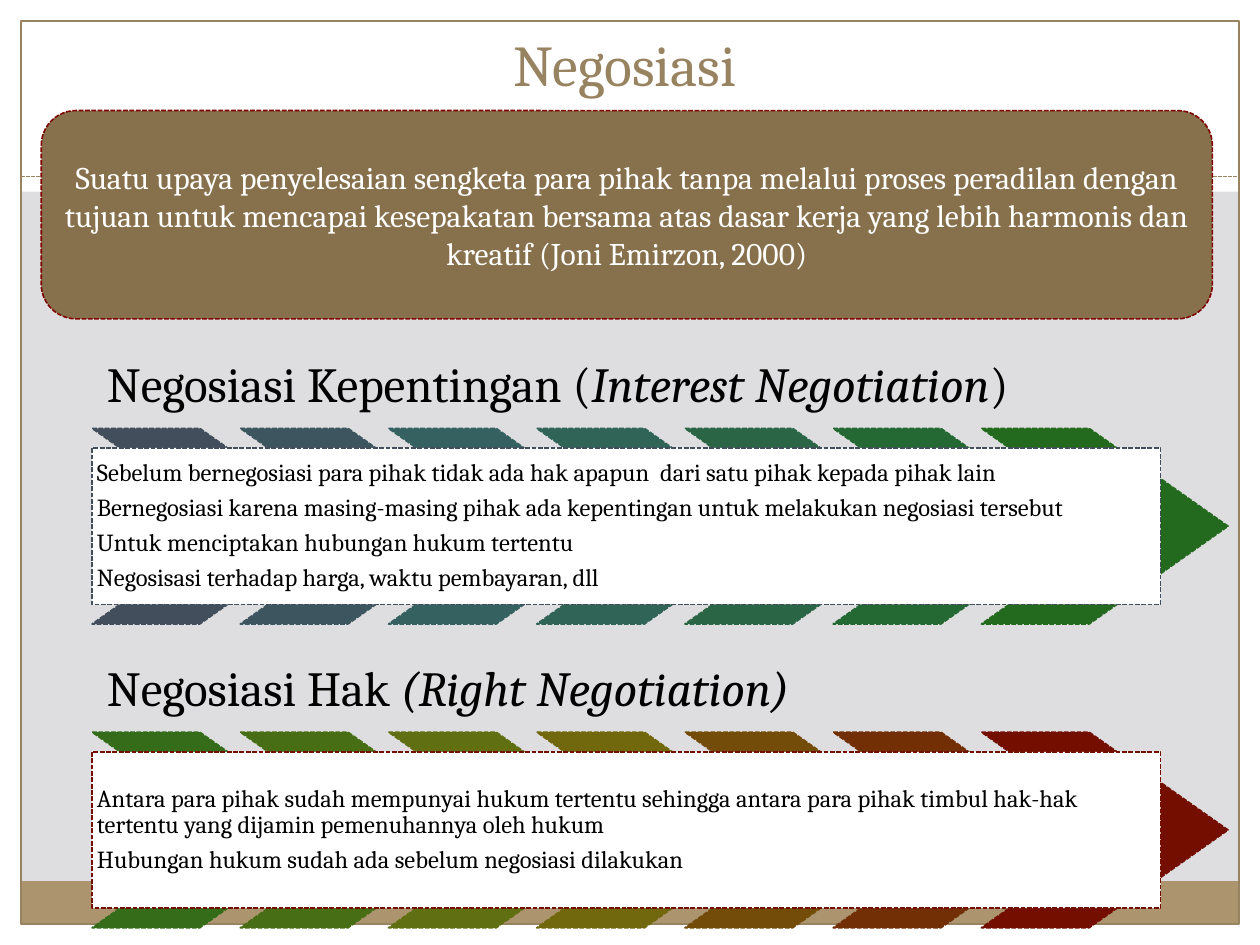
import pptx
import pptx.util
from dataclasses import dataclass
from pptx.dml.color import RGBColor
from pptx.enum.dml import MSO_LINE
from pptx.enum.shapes import MSO_CONNECTOR, MSO_SHAPE
from pptx.enum.text import MSO_ANCHOR, PP_ALIGN
from lxml import etree

Pt = pptx.util.Pt
DRAWING = "http://schemas.openxmlformats.org/drawingml/2006/main"


@dataclass(frozen=True)
class Theme:
    font: str = "Cambria"
    background: str = "DEDEE0"
    white: str = "FFFFFF"
    black: str = "000000"
    tan: str = "988361"
    band: str = "AC956E"
    banner: str = "87714D"
    banner_line: str = "800101"
    title_size: float = 33
    heading_size: float = 28
    banner_size: float = 18
    body_size: float = 14
    thin: float = 0.75
    dash: float = 0.9


THEME = Theme()

INTEREST = {
    "heading": [("Negosiasi Kepentingan (", False), ("Interest Negotiation", True), (")", False)],
    "body": [
        "Sebelum bernegosiasi para pihak tidak ada hak apapun  dari satu pihak kepada pihak lain",
        "Bernegosiasi karena masing-masing pihak ada kepentingan untuk melakukan negosiasi tersebut",
        "Untuk menciptakan hubungan hukum tertentu",
        "Negosisasi terhadap harga, waktu pembayaran, dll",
    ],
    "colors": ["424E5B", "3C555E", "366161", "306456", "2A6646", "246833", "236A1F"],
    "panel_line": "424E5B",
}
RIGHT = {
    "heading": [("Negosiasi Hak ", False), ("(Right Negotiation)", True)],
    "body": [
        "Antara para pihak sudah mempunyai hukum tertentu sehingga antara para pihak timbul "
        "hak-hak tertentu yang dijamin pemenuhannya oleh hukum",
        "Hubungan hukum sudah ada sebelum negosiasi dilakukan",
    ],
    "colors": ["346C1A", "486E15", "606F11", "71670C", "724C08", "722E04", "730E00"],
    "panel_line": "730E00",
}
DEFINITION = (
    "Suatu upaya penyelesaian sengketa para pihak tanpa melalui proses peradilan dengan tujuan "
    "untuk mencapai kesepakatan bersama atas dasar kerja yang lebih harmonis dan kreatif "
    "(Joni Emirzon, 2000)"
)


def style_line(line, color, width, dashed=False):
    line.color.rgb = RGBColor.from_string(color)
    line.width = Pt(width)
    if dashed:
        line.dash_style = MSO_LINE.SQUARE_DOT


def add_box(shapes, kind, box, fill=None, line=None, width=THEME.dash, dashed=True):
    shape = shapes.add_shape(kind, *map(Pt, box))
    shape.shadow.inherit = False
    if fill:
        shape.fill.solid()
        shape.fill.fore_color.rgb = RGBColor.from_string(fill)
    else:
        shape.fill.background()
    if line:
        style_line(shape.line, line, width, dashed)
    else:
        shape.line.fill.background()
    return shape


def write_text(shape, paragraphs, size, color, anchor, align=PP_ALIGN.LEFT, inset=None,
               line_spacing=None, space_after=0):
    """Each paragraph is a list of (text, italic) pairs."""
    frame = shape.text_frame
    frame.word_wrap = True
    frame.vertical_anchor = anchor
    if inset is not None:
        frame.margin_left = frame.margin_top = Pt(inset)
        frame.margin_right = frame.margin_bottom = Pt(inset)
    for index, pieces in enumerate(paragraphs):
        paragraph = frame.add_paragraph() if index else frame.paragraphs[0]
        paragraph.alignment = align
        paragraph.space_after = Pt(space_after)
        if line_spacing:
            paragraph.line_spacing = line_spacing
        for text, italic in pieces:
            run = paragraph.add_run()
            run.text = text
            run.font.name = THEME.font
            run.font.size = Pt(size)
            run.font.italic = italic
            run.font.color.rgb = RGBColor.from_string(color)


def add_frame(slide, box):
    """White margins, header, footer band, outline and dashed rule."""
    left, top, width, height = box
    margin, header, footer = 12, 109.5, 24.5
    inner = (left + margin, top + margin, width - 2 * margin, height - 2 * margin)
    bottom = top + height - margin
    right = left + width - margin
    for part in (
        (left, bottom, width, margin),
        (left, top, width, header),
        (left, top, margin, height),
        (right, top, margin, height),
    ):
        add_box(slide.shapes, MSO_SHAPE.RECTANGLE, part, THEME.white)
    add_box(slide.shapes, MSO_SHAPE.RECTANGLE,
            (inner[0], bottom - footer, inner[2], footer), THEME.band)
    add_box(slide.shapes, MSO_SHAPE.RECTANGLE, inner, line=THEME.tan,
            width=THEME.thin, dashed=False)
    rule = top + 100.8
    connector = slide.shapes.add_connector(
        MSO_CONNECTOR.STRAIGHT, Pt(inner[0]), Pt(rule), Pt(right), Pt(rule))
    style_line(connector.line, THEME.tan, THEME.thin, dashed=True)
    etree.SubElement(connector._element.spPr, f"{{{DRAWING}}}effectLst")


def add_title(slide, box):
    title = slide.shapes.add_textbox(*map(Pt, box))
    write_text(title, [[("Negosiasi", False)]], THEME.title_size, THEME.tan,
               MSO_ANCHOR.BOTTOM, PP_ALIGN.CENTER)


def add_section(shapes, box, section):
    """Heading above a row of chevrons with a text panel across it."""
    left, top, width, height = box
    heading_height = 54.7
    strip_top, strip_height = top + heading_height, height - heading_height
    chevron_width, pitch = 141, 84.7

    heading = shapes.add_textbox(*map(Pt, (left, top, width, heading_height)))
    write_text(heading, [section["heading"]], THEME.heading_size, THEME.black,
               MSO_ANCHOR.BOTTOM, inset=8.5, line_spacing=0.9)

    for index, color in enumerate(section["colors"]):
        chevron = add_box(shapes, MSO_SHAPE.CHEVRON,
                          (left + index * pitch, strip_top, chevron_width, strip_height),
                          color, color)
        chevron.adjustments[0] = 0.71

    panel = (left, strip_top + 0.1 * strip_height, 610.6, 0.8 * strip_height)
    add_box(shapes, MSO_SHAPE.RECTANGLE, panel, THEME.white, section["panel_line"])
    body = shapes.add_textbox(*map(Pt, panel))
    write_text(body, [[(text, False)] for text in section["body"]], THEME.body_size,
               THEME.black, MSO_ANCHOR.MIDDLE, inset=2.8, line_spacing=0.9, space_after=4.9)


def add_definition(slide, box):
    banner = add_box(slide.shapes, MSO_SHAPE.ROUNDED_RECTANGLE, box,
                     THEME.banner, THEME.banner_line)
    write_text(banner, [[(DEFINITION, False)]], THEME.banner_size, THEME.white,
               MSO_ANCHOR.MIDDLE, PP_ALIGN.CENTER)


def main():
    presentation = pptx.Presentation()
    presentation.slide_width, presentation.slide_height = Pt(720), Pt(540)
    slide = presentation.slides.add_slide(presentation.slide_layouts[6])
    slide.background.fill.solid()
    slide.background.fill.fore_color.rgb = RGBColor.from_string(THEME.background)

    add_frame(slide, (0, 0, 720, 540))
    add_title(slide, (21, 0, 672, 59.8))
    sections = slide.shapes.add_group_shape().shapes
    for index, section in enumerate((INTEREST, RIGHT)):
        add_section(sections, (52.6, 190.1 + index * 173.6, 602.6, 166.5), section)
    add_definition(slide, (23.6, 63.2, 669.2, 119))
    presentation.save("out.pptx")


if __name__ == "__main__":
    main()
